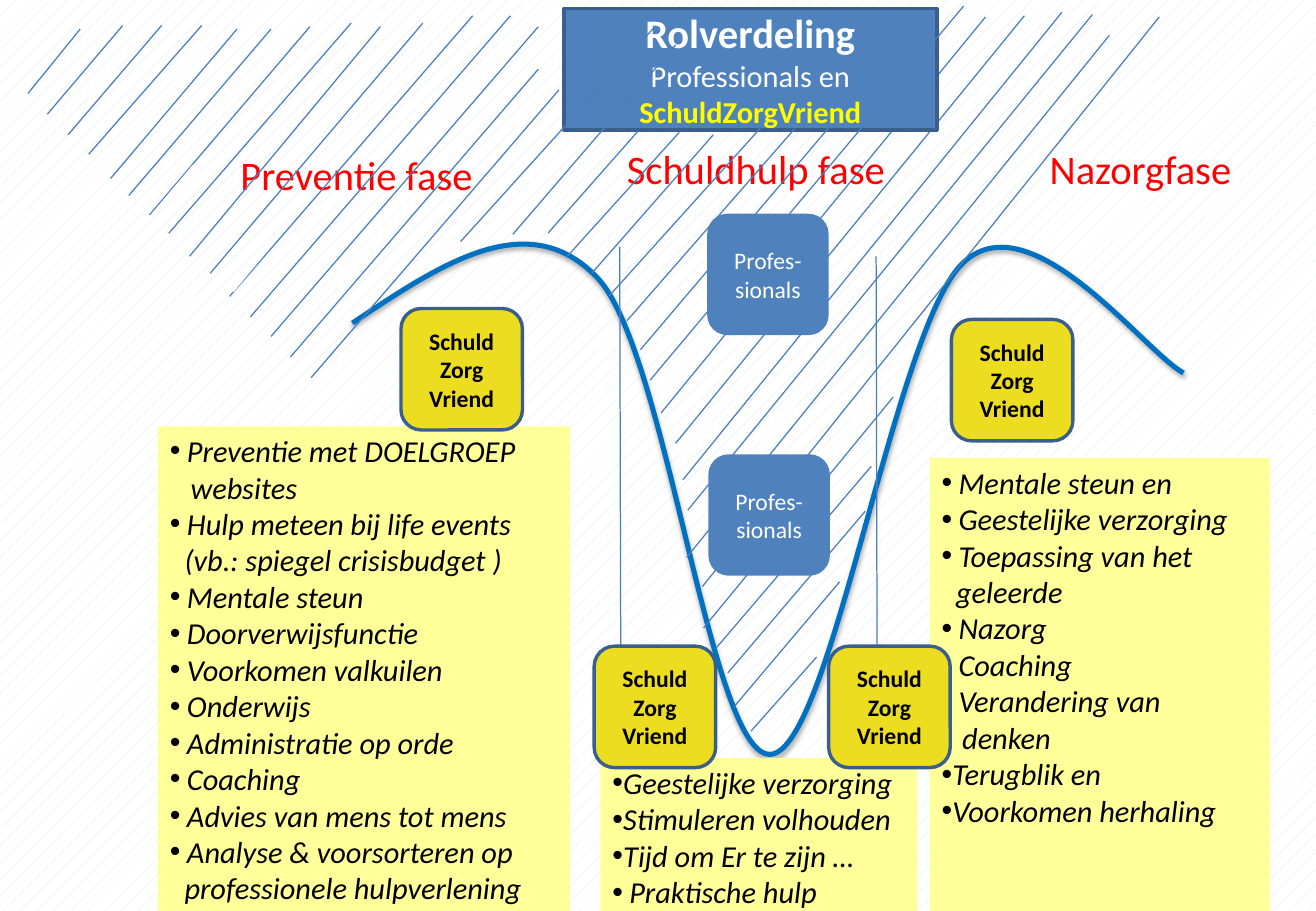
"""Build the slide on the division of roles across the three phases of debt help."""
from dataclasses import dataclass
from typing import NamedTuple, Optional

from lxml import etree
from pptx import Presentation
from pptx import util as u
from pptx.dml import color
from pptx.enum import dml, shapes, text
from pptx.oxml import ns

PX = 9144


@dataclass(frozen=True)
class Theme:
    font: str = "Calibri"
    white: str = "FFFFFF"
    black: str = "000000"
    red: str = "FF0000"
    yellow: str = "FFFF00"
    blue: str = "4F81BD"
    edge: str = "3A5F8C"
    hatch: str = "4B7EBC"
    curve: str = "0070C0"
    panel: str = "FFFF99"
    badge: str = "ECDD20"
    dots: str = "DCE6F2"
    heading: int = 24
    body: int = 18
    small: int = 14


T = Theme()


class Segment(NamedTuple):
    x1: int
    y1: int
    x2: int
    y2: int


class Para(NamedTuple):
    text: str
    size: int
    color: str
    bold: bool = False
    italic: bool = False
    margin: int = 0
    bullet: bool = False


@dataclass(frozen=True)
class Box:
    x: int
    y: int
    w: int
    h: int
    paras: list[Para]
    fill: Optional[str] = None
    line: Optional[str] = None
    rounded: bool = False
    centred: bool = True


def rgb(value: str) -> color.RGBColor:
    return color.RGBColor.from_string(value)


def item(words: str, margin: int = 14, bullet: bool = True) -> Para:
    return Para(words, T.body, T.black, italic=True, margin=margin, bullet=bullet)


def panel(x: int, y: int, w: int, h: int, items: list[Para]) -> Box:
    return Box(x, y, w, h, items, T.panel, centred=False)


def label(x: int, y: int, w: int, words: str) -> Box:
    return Box(x, y, w, 50, [Para(words, T.heading, T.red)], centred=False)


def helper(x: int, y: int) -> Box:
    paras = [Para(w, T.small, T.black, True) for w in ("Schuld", "Zorg", "Vriend")]
    return Box(x, y, 100, 100, paras, T.badge, T.edge, True)


def professional(x: int, y: int) -> Box:
    paras = [Para(w, T.small, T.white) for w in ("Profes-", "sionals")]
    return Box(x, y, 100, 100, paras, T.blue, rounded=True)


BACK_HATCH = [Segment(843, 13, 556, 365), Segment(811, 14, 544, 340),
              Segment(443, 57, 239, 294)]
DIVIDERS = [Segment(510, 203, 511, 608), Segment(721, 211, 722, 615)]
HATCH = [Segment(*ends) for ends in (
    (66, 24, 23, 77), (101, 21, 39, 94), (133, 21, 56, 111), (166, 21, 73, 127),
    (195, 24, 91, 147), (223, 24, 106, 161), (255, 22, 123, 177), (289, 19, 139, 192),
    (313, 22, 156, 211), (348, 19, 173, 225), (389, 13, 189, 244), (420, 13, 206, 261),
    (443, 22, 223, 277), (460, 74, 256, 311), (538, 23, 379, 199), (556, 37, 422, 193),
    (525, 108, 451, 192), (559, 109, 466, 212), (587, 111, 487, 225),
    (628, 103, 501, 244), (654, 106, 516, 264), (683, 104, 527, 288),
    (793, 5, 535, 313), (691, 479, 604, 582), (672, 541, 618, 602),
    (874, 10, 562, 395), (899, 12, 566, 420), (913, 29, 565, 459),
    (954, 14, 578, 483), (735, 327, 579, 517), (712, 421, 599, 554),
    (717, 384, 589, 534))]
GAPS = [Segment(159, 136, 113, 191), Segment(239, 183, 192, 240)]
CURVE = [(290, 266), (362, 218), (434, 169), (491, 228), (549, 287), (584, 623),
         (634, 621), (684, 619), (736, 269), (793, 216), (849, 164), (943, 291),
         (974, 307)]
LABELS = [label(188, 119, 214, "Preventie fase"), label(506, 114, 235, "Schuldhulp fase"),
          label(854, 114, 170, "Nazorgfase")]
PANELS = [
    panel(765, 377, 280, 404, [
        item("Mentale steun en"), item("Geestelijke verzorging"),
        item("Toepassing van het"), item("geleerde", 12, False), item("Nazorg"),
        item("Coaching"), item("Verandering van"), item("denken", 17, False),
        item("Terugblik en", 9), item("Voorkomen herhaling", 9)]),
    panel(130, 351, 339, 434, [
        item("Preventie met DOELGROEP"), item("websites", 17, False),
        item("Hulp meteen bij life events"),
        item("(vb.: spiegel crisisbudget )", 12, False), item("Mentale steun"),
        item("Doorverwijsfunctie"), item("Voorkomen valkuilen"), item("Onderwijs"),
        item("Administratie op orde"), item("Coaching"),
        item("Advies van mens tot mens"), item("Analyse & voorsorteren op"),
        item("professionele hulpverlening", 12, False)]),
    panel(494, 624, 261, 131, [
        item("Geestelijke verzorging", 9), item("Stimuleren volhouden", 9),
        item("Tijd om Er te zijn …", 9), item("Praktische hulp")]),
]
TITLE = Box(464, 7, 307, 100, [
    Para("Rolverdeling", T.heading, T.white, True),
    Para("Professionals en", T.body, T.white),
    Para("SchuldZorgVriend", T.body, T.yellow, True)], T.blue, T.edge)
BADGES = [professional(583, 374), helper(330, 254), helper(489, 532),
          helper(783, 263), professional(582, 176), helper(682, 532)]


def draw_segments(sl, segments: list[Segment], line: str) -> None:
    for seg in segments:
        c = sl.shapes.add_connector(shapes.MSO_CONNECTOR.STRAIGHT, *(v * PX for v in seg))
        c.line.color.rgb = rgb(line)
        c.line.width = u.Pt(0.75)
        etree.SubElement(c._element.spPr, ns.qn("a:effectLst"))


def write_para(p, para: Para) -> None:
    pr = p._p.get_or_add_pPr()
    pr.set("marL", str(para.margin * PX))
    pr.set("indent", str(-para.margin * PX if para.bullet else 0))
    if para.bullet:
        etree.SubElement(pr, ns.qn("a:buFont")).set("typeface", "Arial")
        etree.SubElement(pr, ns.qn("a:buChar")).set("char", "•")
    r = p.add_run()
    r.text = para.text
    r.font.name, r.font.size = T.font, u.Pt(para.size)
    r.font.bold, r.font.italic = para.bold, para.italic
    r.font.color.rgb = rgb(para.color)


def draw_box(sl, box: Box) -> None:
    frame = [v * PX for v in (box.x, box.y, box.w, box.h)]
    if box.fill is None:
        sp = sl.shapes.add_textbox(*frame)
    else:
        preset = shapes.MSO_SHAPE
        kind = preset.ROUNDED_RECTANGLE if box.rounded else preset.RECTANGLE
        sp = sl.shapes.add_shape(kind, *frame)
        sp.shadow.inherit = False
        sp.fill.solid()
        sp.fill.fore_color.rgb = rgb(box.fill)
        if box.line:
            sp.line.color.rgb = rgb(box.line)
            sp.line.width = u.Pt(2)
        else:
            sp.line.fill.background()
    tf = sp.text_frame
    tf.word_wrap = box.fill is not None
    tf.vertical_anchor = text.MSO_ANCHOR.MIDDLE if box.centred else text.MSO_ANCHOR.TOP
    for i, para in enumerate(box.paras):
        p = tf.add_paragraph() if i else tf.paragraphs[0]
        p.alignment = text.PP_ALIGN.CENTER if box.centred else text.PP_ALIGN.LEFT
        write_para(p, para)


def draw_curve(sl, points: list[tuple[int, int]]) -> None:
    builder = sl.shapes.build_freeform(*points[0], scale=PX)
    builder.add_line_segments(points[1:], close=False)
    sp = builder.convert_to_shape()
    sp.fill.background()
    sp.line.color.rgb = rgb(T.curve)
    sp.line.width = u.Pt(3)
    steps = list(sp._element.iter(ns.qn("a:lnTo")))
    for i in range(0, len(steps), 3):
        bend = etree.SubElement(steps[i].getparent(), ns.qn("a:cubicBezTo"))
        for step in steps[i:i + 3]:
            bend.append(step[0])
            step.getparent().remove(step)
    effects = etree.SubElement(sp._element.spPr, ns.qn("a:effectLst"))
    shadow = etree.SubElement(effects, ns.qn("a:outerShdw"), blurRad=str(u.Pt(3.1)),
                              dist=str(u.Pt(1.8)), dir="5400000", rotWithShape="0")
    tint = etree.SubElement(shadow, ns.qn("a:srgbClr"), val=T.black)
    etree.SubElement(tint, ns.qn("a:alpha"), val="35000")


def main() -> None:
    prs = Presentation()
    prs.slide_width, prs.slide_height = 1083 * PX, 750 * PX
    s = prs.slides.add_slide(prs.slide_layouts[6])
    fill = s.background.fill
    fill.patterned()
    fill.pattern = dml.MSO_PATTERN.PERCENT_5
    fill.fore_color.rgb, fill.back_color.rgb = rgb(T.dots), rgb(T.white)
    draw_segments(s, BACK_HATCH, T.hatch)
    draw_curve(s, CURVE)
    for box in LABELS:
        draw_box(s, box)
    draw_segments(s, DIVIDERS, T.hatch)
    for box in [*PANELS, TITLE]:
        draw_box(s, box)
    draw_segments(s, HATCH, T.hatch)
    draw_segments(s, GAPS, T.white)
    for box in BADGES:
        draw_box(s, box)
    prs.save("out.pptx")


if __name__ == "__main__":
    main()
